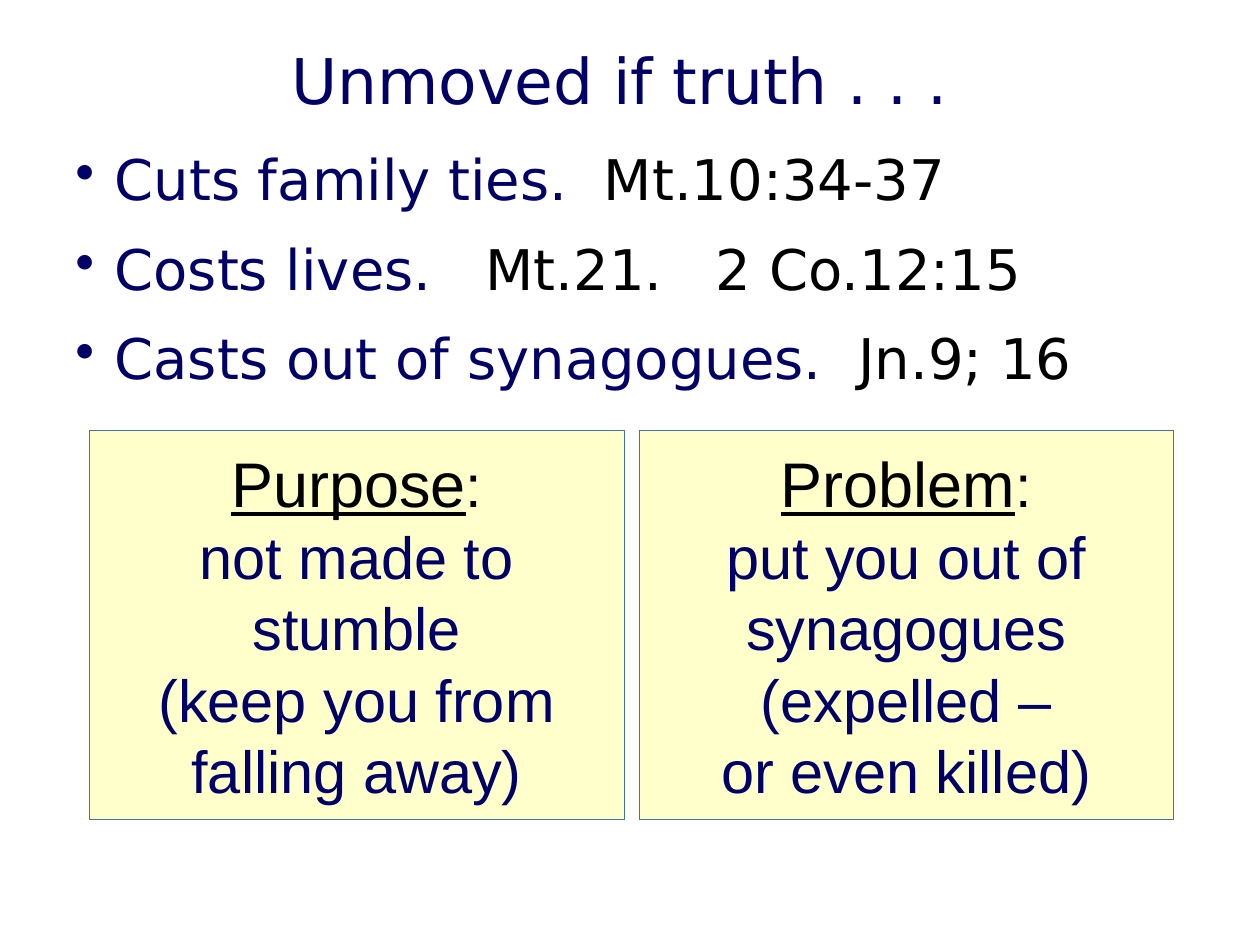
from lxml import etree
from pptx import Presentation
from pptx.dml.color import RGBColor
from pptx.enum.shapes import MSO_SHAPE
from pptx.enum.text import MSO_ANCHOR, PP_ALIGN
from pptx.oxml.ns import qn
from pptx.util import Cm, Pt

CENTER = PP_ALIGN.CENTER
MIDDLE = MSO_ANCHOR.MIDDLE
RECTANGLE = MSO_SHAPE.RECTANGLE

NAVY, BLACK, CREAM, BLUE = "000066", "000000", "FFFFCC", "43739E"
HEADING_FONT, BOX_FONT = "DejaVu Sans", "Arial"

TITLE = "Unmoved if truth . . . "
POINTS = [
    ("Cuts family ties.  ", "Mt.10:34-37"),
    ("Costs lives.   ", "Mt.21.   2 Co.12:15"),
    ("Casts out of synagogues.  ", "Jn.9; 16"),
]
BOXES = [
    ("Purpose", ["not made to stumble", "(keep you from falling away)"]),
    ("Problem", ["put you out of synagogues", "(expelled –", "or even killed)"]),
]

MARGIN, CONTENT_WIDTH = 1.27, 22.86
BOX_LEFT, BOX_TOP, BOX_WIDTH, BOX_HEIGHT, BOX_GAP = 1.8, 8.68, 10.78, 7.83, 0.3
INDENT = Cm(0.79)


def color(hex_string):
    return RGBColor.from_string(hex_string)


def set_font(font, name, size, hex_string):
    font.name = name
    font.size = Pt(size)
    font.color.rgb = color(hex_string)


def add_run(paragraph, text, hex_string):
    run = paragraph.add_run()
    run.text = text
    run.font.color.rgb = color(hex_string)
    return run


def add_bullet(paragraph):
    properties = paragraph._p.get_or_add_pPr()
    properties.set("marL", str(INDENT))
    properties.set("indent", str(-INDENT))
    etree.SubElement(properties, qn("a:buChar")).set("char", "•")


def add_title(slide):
    title = slide.shapes.title
    title.left, title.top = Cm(MARGIN), Cm(0.64)
    title.width, title.height = Cm(CONTENT_WIDTH), Cm(2.11)
    title.text_frame.text = TITLE
    title.text_frame.vertical_anchor = MIDDLE
    paragraph = title.text_frame.paragraphs[0]
    paragraph.alignment = CENTER
    paragraph.line_spacing = 0.9
    set_font(paragraph.font, HEADING_FONT, 36, NAVY)


def add_points(slide):
    text_box = slide.shapes.add_textbox(
        Cm(MARGIN), Cm(2.95), Cm(CONTENT_WIDTH), Cm(15.24))
    frame = text_box.text_frame
    frame.word_wrap = True
    for index, (statement, reference) in enumerate(POINTS):
        paragraph = frame.add_paragraph() if index else frame.paragraphs[0]
        paragraph.line_spacing = 0.9
        paragraph.space_before, paragraph.space_after = Pt(7.5), Pt(9)
        add_bullet(paragraph)
        set_font(paragraph.font, HEADING_FONT, 32, NAVY)
        add_run(paragraph, statement, NAVY)
        add_run(paragraph, reference, BLACK)


def add_box(slide, column, heading, lines):
    left = BOX_LEFT + column * (BOX_WIDTH + BOX_GAP)
    box = slide.shapes.add_shape(
        RECTANGLE, Cm(left), Cm(BOX_TOP), Cm(BOX_WIDTH), Cm(BOX_HEIGHT))
    box.shadow.inherit = False
    box.fill.solid()
    box.fill.fore_color.rgb = color(CREAM)
    box.line.color.rgb = color(BLUE)
    box.line.width = Pt(0.25)
    box.text_frame.word_wrap = True
    box.text_frame.vertical_anchor = MIDDLE
    paragraph = box.text_frame.paragraphs[0]
    paragraph.alignment = CENTER
    set_font(paragraph.font, BOX_FONT, 34, NAVY)
    heading_run = add_run(paragraph, heading, BLACK)
    heading_run.font.size = Pt(36)
    heading_run.font.underline = True
    add_run(paragraph, ":", BLACK)
    for line in lines:
        paragraph.add_line_break()
        add_run(paragraph, line, NAVY)


def main():
    presentation = Presentation()
    presentation.slide_width, presentation.slide_height = Cm(25.4), Cm(19.05)
    slide = presentation.slides.add_slide(presentation.slide_layouts[5])
    slide.background.fill.solid()
    slide.background.fill.fore_color.rgb = color("FFFFFF")
    add_title(slide)
    add_points(slide)
    for column, (heading, lines) in enumerate(BOXES):
        add_box(slide, column, heading, lines)
    presentation.save("out.pptx")


if __name__ == "__main__":
    main()
